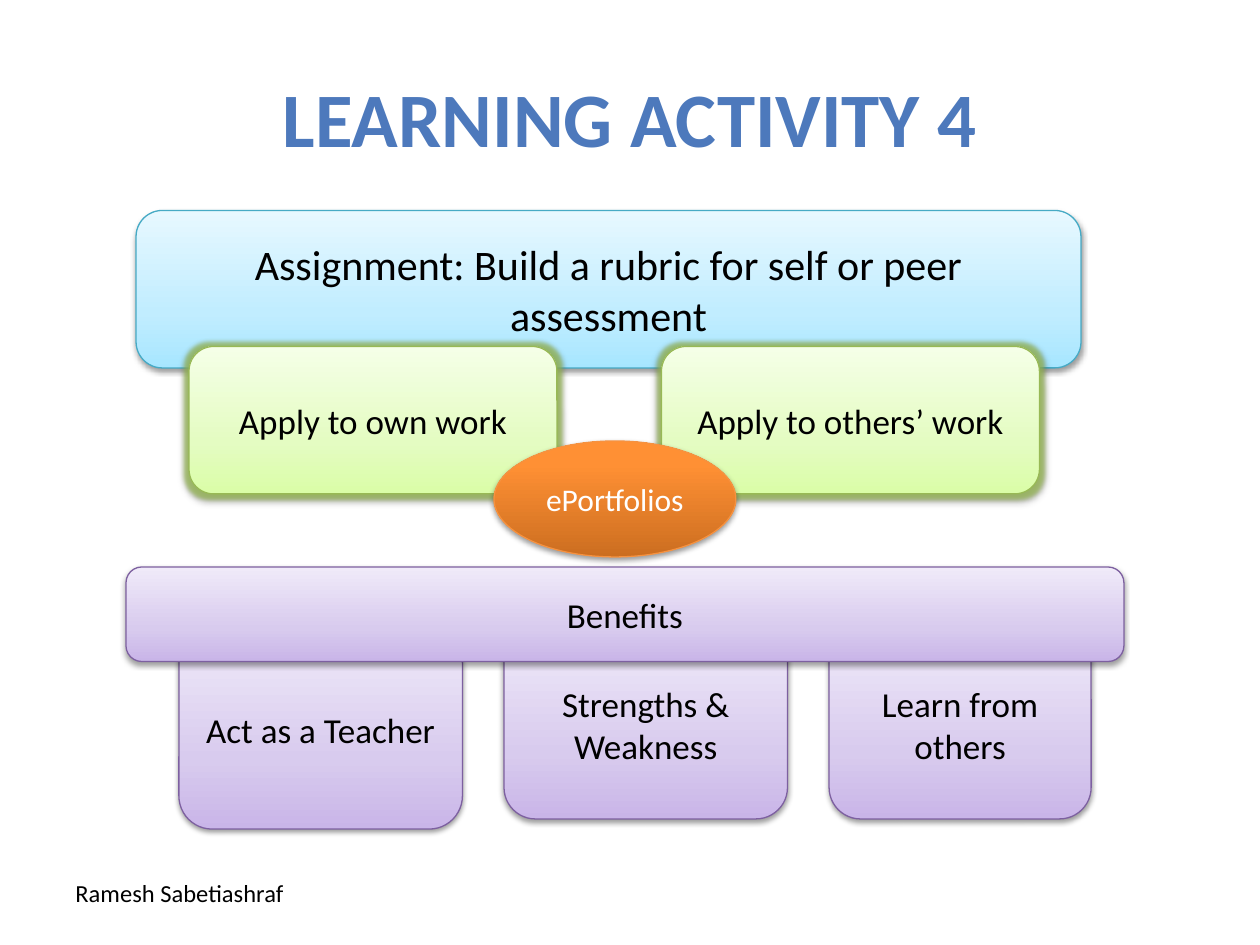
from lxml import etree
from pptx import Presentation
from pptx.dml.color import RGBColor
from pptx.enum.shapes import MSO_SHAPE as SHAPE
from pptx.enum.text import MSO_ANCHOR as ANCHOR, PP_ALIGN as ALIGN
from pptx.oxml.ns import qn
from pptx.util import Inches, Pt

COLORS = {"title": "4D79BC", "black": "000000", "white": "FFFFFF"}
STYLES = {
    "blue": {"line": "46AAC5", "stops": [(0, "A7E6FF"), (35, "C1EDFF"), (100, "E7F8FF")]},
    "green": {"line": "98B955", "stops": [(0, "DAFDA7"), (35, "E4FCC2"), (100, "F5FFE7")]},
    "purple": {"line": "7D60A0", "stops": [(0, "C9B5E8"), (35, "D8CBEE"), (100, "F0EAF9")]},
    "orange": {"line": "F69240", "stops": [(0, "CC6E20"), (80, "FF9034"), (100, "FF9136")]},
}
ASSIGNMENT = ("Assignment: Build a rubric for self or peer assessment", 1.08, 1.67, 7.5, 1.25)
BENEFIT_TOP = 5
BENEFITS = [
    ("Act as a Teacher", 1.42, 2.25, 1.58),
    ("Strengths & Weakness", 4, 2.25, 1.5),
    ("Learn from others", 6.58, 2.08, 1.5),
]
APPLY_TOP, APPLY_HEIGHT = 2.75, 1.17
OWN_WORK = ("Apply to own work", 1.5, APPLY_TOP, 2.92, APPLY_HEIGHT)
OTHERS_WORK = ("Apply to others’ work", 5.25, APPLY_TOP, 3, APPLY_HEIGHT)
BENEFITS_BAR = ("Benefits", 1, 4.5, 7.92, 0.75)
PORTFOLIOS = ("ePortfolios", 3.92, 3.5, 1.92, 0.92)


def write(sp, text, size, color="black", bold=False, align=ALIGN.CENTER, anchor=ANCHOR.MIDDLE):
    tf = sp.text_frame
    tf.word_wrap = True
    tf.vertical_anchor = anchor
    tf.text = text
    p = tf.paragraphs[0]
    p.alignment = align
    font = p.runs[0].font
    font.name, font.size, font.bold = "Calibri", Pt(size), bold
    font.color.rgb = RGBColor.from_string(COLORS[color])


def add_color(parent, color, alpha=None):
    clr = etree.SubElement(parent, qn("a:srgbClr"), val=color)
    if alpha is not None:
        etree.SubElement(clr, qn("a:alpha"), val=str(alpha * 1000))


def set_gradient(sp, stops):
    sp.fill.gradient()
    sp.fill.gradient_angle = 90
    gs_list = sp._element.spPr.find(".//" + qn("a:gsLst"))
    for gs in list(gs_list):
        gs_list.remove(gs)
    for pos, color in stops:
        add_color(etree.SubElement(gs_list, qn("a:gs"), pos=str(pos * 1000)), color)


def set_effects(sp, glow=None):
    sp.shadow.inherit = False
    effects = sp._element.spPr.find(qn("a:effectLst"))
    if glow:
        add_color(etree.SubElement(effects, qn("a:glow"), rad=str(Pt(5))), glow, 75)
    shadow = etree.SubElement(effects, qn("a:outerShdw"), blurRad=str(Pt(3.1)),
                              dist=str(Pt(1.6)), dir="5400000", rotWithShape="0")
    add_color(shadow, COLORS["black"], 38)


def add_box(slide, box, style, size=20, shape=SHAPE.ROUNDED_RECTANGLE, color="black", glow=False):
    text, *place = box
    look = STYLES[style]
    sp = slide.shapes.add_shape(shape, *map(Inches, place))
    set_gradient(sp, look["stops"])
    sp.line.color.rgb = RGBColor.from_string(look["line"])
    sp.line.width = Pt(0.75)
    set_effects(sp, look["line"] if glow else None)
    write(sp, text, size, color)


def add_label(slide, text, place, size, **options):
    sp = slide.shapes.add_textbox(*map(Inches, place))
    write(sp, text, size, **options)


def main():
    prs = Presentation()
    prs.slide_width, prs.slide_height = Inches(10), Inches(7.5)
    slide = prs.slides.add_slide(prs.slide_layouts[6])
    add_label(slide, "Ramesh Sabetiashraf", (0.5, 6.92, 2.75, 0.57), 14,
              align=ALIGN.LEFT, anchor=ANCHOR.TOP)
    add_label(slide, "LEARNING ACTIVITY 4", (0.5, 0.3, 9, 1.25), 44, color="title", bold=True)
    add_box(slide, ASSIGNMENT, "blue", size=24)
    for text, left, width, height in BENEFITS:
        add_box(slide, (text, left, BENEFIT_TOP, width, height), "purple")
    add_box(slide, OWN_WORK, "green", glow=True)
    add_box(slide, BENEFITS_BAR, "purple")
    add_box(slide, OTHERS_WORK, "green", glow=True)
    add_box(slide, PORTFOLIOS, "orange", size=18, shape=SHAPE.OVAL, color="white")
    prs.save("out.pptx")


if __name__ == "__main__":
    main()
